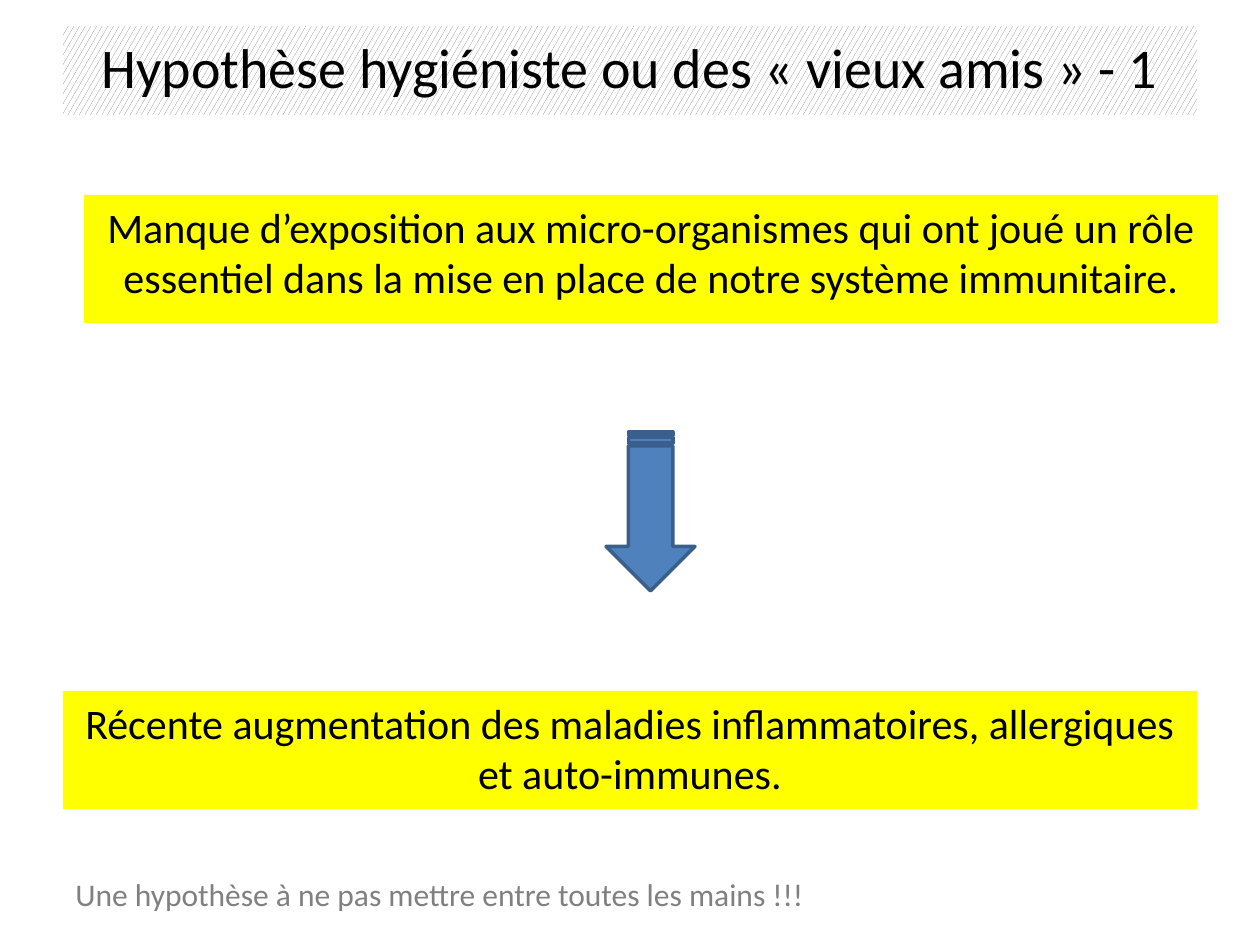
from dataclasses import dataclass

from pptx import Presentation
from pptx import util as u
from pptx.dml.color import RGBColor
from pptx.enum import dml, shapes, text

EMU_PER_PX = u.Inches(1) // 126


@dataclass(frozen=True)
class Theme:
    font: str = "Calibri"
    ink: str = "000000"
    muted: str = "808080"
    paper: str = "FFFFFF"
    highlight: str = "FFFF00"
    arrow_fill: str = "4F81BD"
    arrow_line: str = "3A5F8C"
    title_size: int = 32
    body_size: int = 24
    note_size: int = 18


THEME = Theme()


def px(*lengths):
    return [length * EMU_PER_PX for length in lengths]


def rgb(value):
    return RGBColor.from_string(value)


def write(shape, words, size, color=THEME.ink, align=text.PP_ALIGN.CENTER):
    frame = shape.text_frame
    frame.text = words
    frame_format = {
        "word_wrap": True,
        "auto_size": text.MSO_AUTO_SIZE.NONE,
        "vertical_anchor": text.MSO_ANCHOR.TOP,
    }
    for name, value in frame_format.items():
        setattr(frame, name, value)
    paragraph = frame.paragraphs[0]
    paragraph.alignment = align
    font = paragraph.runs[0].font
    for name, value in {"name": THEME.font, "size": u.Pt(size)}.items():
        setattr(font, name, value)
    font.color.rgb = rgb(color)


def set_title(slide, words, box):
    title = slide.shapes.title
    for name, value in zip(("left", "top", "width", "height"), px(*box)):
        setattr(title, name, value)
    title.fill.patterned()
    title.fill.pattern = dml.MSO_PATTERN.LARGE_CONFETTI
    title.fill.fore_color.rgb = rgb(THEME.muted)
    title.fill.back_color.rgb = rgb(THEME.paper)
    write(title, words, THEME.title_size)


def add_filled_shape(slide, kind, box, fill):
    shape = slide.shapes.add_shape(kind, *px(*box))
    shape.shadow.inherit = False
    shape.fill.solid()
    shape.fill.fore_color.rgb = rgb(fill)
    return shape


def add_statement(slide, words, box):
    statement = add_filled_shape(
        slide, shapes.MSO_SHAPE.RECTANGLE, box, THEME.highlight)
    statement.line.fill.background()
    write(statement, words, THEME.body_size)


def add_down_arrow(slide, box):
    """Turn a striped right arrow; box is its place before the turn."""
    arrow = add_filled_shape(
        slide, shapes.MSO_SHAPE.STRIPED_RIGHT_ARROW, box, THEME.arrow_fill)
    arrow.rotation = 90
    arrow.line.color.rgb = rgb(THEME.arrow_line)
    arrow.line.width = u.Pt(2)


def add_note(slide, words, box):
    note = slide.shapes.add_textbox(*px(*box))
    write(note, words, THEME.note_size, THEME.muted, text.PP_ALIGN.LEFT)


def main():
    presentation = Presentation()
    presentation.slide_width, presentation.slide_height = px(1260, 945)
    slide = presentation.slides.add_slide(
        presentation.slide_layouts.get_by_name("Title Only"))

    set_title(slide, "Hypothèse hygiéniste ou des « vieux amis » - 1",
              (63, 26, 1134, 89))
    add_statement(
        slide,
        "Manque d’exposition aux micro-organismes qui ont joué un rôle "
        "essentiel dans la mise en place de notre système immunitaire.",
        (84, 195, 1134, 128))
    add_down_arrow(slide, (571, 467, 159, 89))
    add_statement(
        slide,
        "Récente augmentation des maladies inflammatoires, allergiques "
        "et auto-immunes.",
        (63, 691, 1134, 118))
    add_note(slide, "Une hypothèse à ne pas mettre entre toutes les mains !!!",
             (63, 869, 1134, 51))

    presentation.save("out.pptx")


if __name__ == "__main__":
    main()
